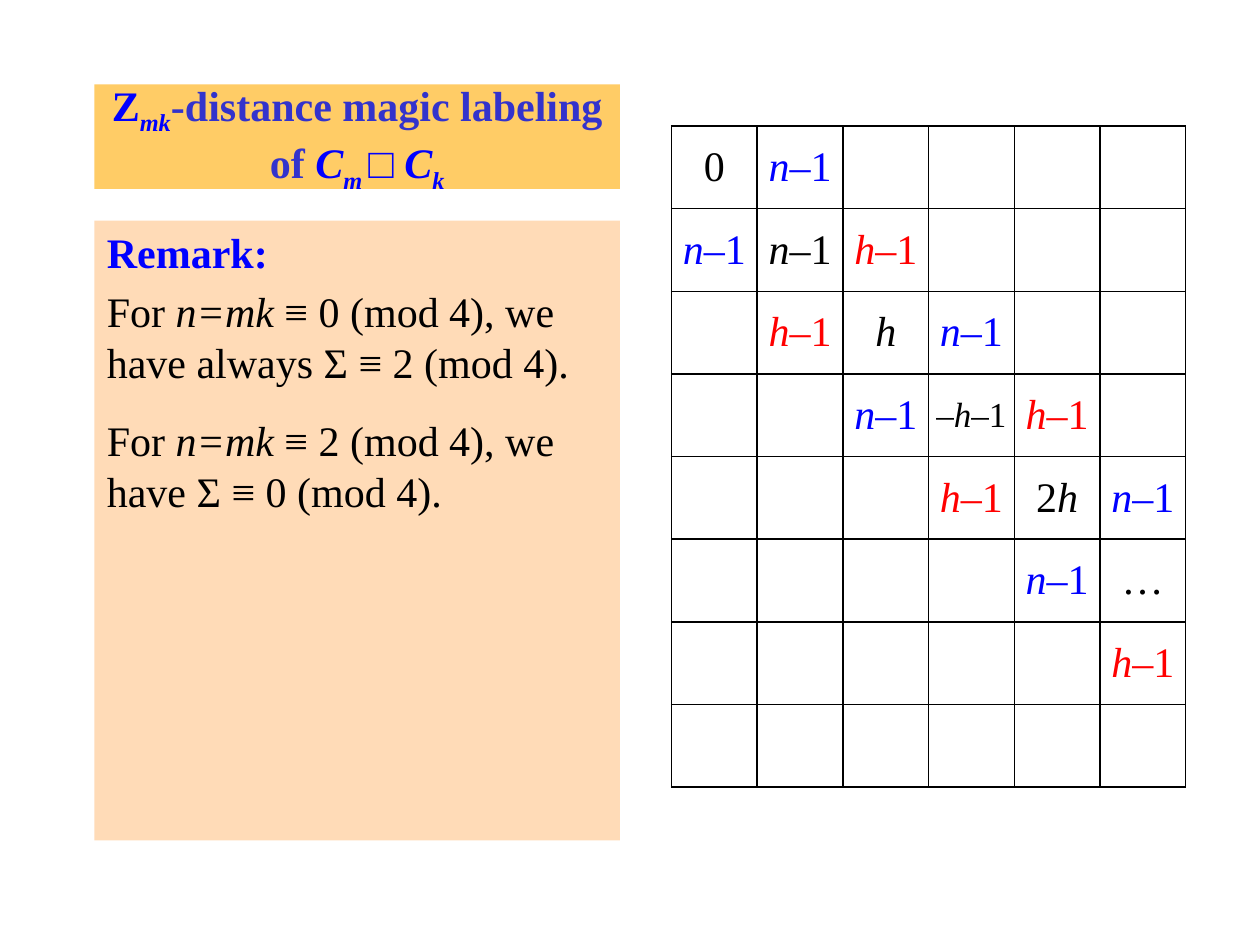
from lxml import etree
from pptx import Presentation
from pptx.dml.color import RGBColor
from pptx.enum.shapes import MSO_SHAPE
from pptx.enum.text import MSO_ANCHOR, PP_ALIGN
from pptx.oxml.ns import qn
from pptx.util import Inches, Pt

RECTANGLE = MSO_SHAPE.RECTANGLE
TOP, MIDDLE = MSO_ANCHOR.TOP, MSO_ANCHOR.MIDDLE
LEFT, CENTER = PP_ALIGN.LEFT, PP_ALIGN.CENTER

FONT = "Times New Roman"
COLORS = {
    "title_fill": "FFCC66",
    "remark_fill": "FFDBB7",
    "blue": "0000FF",
    "indigo": "3333CC",
    "red": "FF0000",
    "black": "000000",
}
ROWS, COLUMNS = 8, 6

# Main diagonal: runs of (text, italic) and the text size
DIAGONAL = [
    ([("0", False)], 24),
    ([("n", True), ("–1", False)], 24),
    ([("h", True)], 24),
    ([("–", False), ("h", True), ("–1", False)], 20),
    ([("2", False), ("h", True)], 24),
    ([("…", False)], 24),
]


def color(name):
    return RGBColor.from_string(COLORS[name])


def add_run(paragraph, text, color_name="black", size=24, bold=False,
            italic=False, subscript=False):
    run = paragraph.add_run()
    run.text = text
    font = run.font
    font.name, font.size = FONT, Pt(size)
    font.bold, font.italic = bold, italic
    font.color.rgb = color(color_name)
    if subscript:
        run._r.get_or_add_rPr().set("baseline", "-25000")


def add_panel(slide, top, height, fill_name, anchor):
    shape = slide.shapes.add_shape(
        RECTANGLE, Inches(0.75), Inches(top), Inches(4.17), Inches(height))
    shape.shadow.inherit = False
    shape.fill.solid()
    shape.fill.fore_color.rgb = color(fill_name)
    shape.line.fill.background()
    frame = shape.text_frame
    frame.word_wrap = True
    frame.vertical_anchor = anchor
    return frame


def add_title(slide):
    frame = add_panel(slide, 0.67, 0.83, "title_fill", MIDDLE)
    paragraph = frame.paragraphs[0]
    paragraph.alignment = CENTER
    add_run(paragraph, "Z", "blue", bold=True)
    add_run(paragraph, "mk", "blue", bold=True, italic=True, subscript=True)
    add_run(paragraph, "-distance magic labeling of ", "indigo", bold=True)
    add_run(paragraph, "C", "blue", bold=True, italic=True)
    add_run(paragraph, "m ", "blue", bold=True, italic=True, subscript=True)
    add_run(paragraph, "□ ", "blue")
    add_run(paragraph, "C", "blue", bold=True, italic=True)
    add_run(paragraph, "k", "blue", bold=True, italic=True, subscript=True)


def add_remark(slide):
    frame = add_panel(slide, 1.75, 4.92, "remark_fill", TOP)
    heading = frame.paragraphs[0]
    heading.alignment = LEFT
    heading.space_before = Pt(5)
    add_run(heading, "Remark:", "blue", bold=True)
    statements = [
        (" ≡ 0 (mod 4), we have always Σ ≡ 2 (mod 4).", 5),
        (" ≡ 2 (mod 4), we have Σ ≡ 0 (mod 4).", 16),
    ]
    for ending, gap in statements:
        paragraph = frame.add_paragraph()
        paragraph.alignment = LEFT
        paragraph.space_before = Pt(gap)
        add_run(paragraph, "For ")
        add_run(paragraph, "n=mk", italic=True)
        add_run(paragraph, ending)


def set_borders(cell):
    properties = cell._tc.get_or_add_tcPr()
    for position, side in enumerate(("lnL", "lnR", "lnT", "lnB")):
        line = etree.Element(qn(f"a:{side}"), w=str(Pt(1)))
        fill = etree.SubElement(line, qn("a:solidFill"))
        etree.SubElement(fill, qn("a:srgbClr"), val=COLORS["black"])
        properties.insert(position, line)


def cell_content(row, column):
    """Return runs, colour and size: a diagonal with alternating neighbours."""
    if row == column:
        runs, size = DIAGONAL[row]
        return runs, "black", size
    if abs(row - column) == 1:
        letter, color_name = (("n", "blue"), ("h", "red"))[min(row, column) % 2]
        return [(letter, True), ("–1", False)], color_name, 24
    return [], "black", 24


def add_label_table(slide):
    table = slide.shapes.add_table(
        ROWS, COLUMNS, Inches(5.33), Inches(1), Inches(4.08), Inches(5.25)).table
    table.first_row = table.horz_banding = False
    for row in range(ROWS):
        for column in range(COLUMNS):
            cell = table.cell(row, column)
            cell.fill.background()
            cell.vertical_anchor = MIDDLE
            cell.margin_left = cell.margin_right = Inches(0.05)
            cell.margin_top = cell.margin_bottom = Inches(0.05)
            set_borders(cell)
            paragraph = cell.text_frame.paragraphs[0]
            paragraph.alignment = CENTER
            runs, color_name, size = cell_content(row, column)
            for text, italic in runs:
                add_run(paragraph, text, color_name, size, italic=italic)


def main():
    presentation = Presentation()
    presentation.slide_width, presentation.slide_height = Inches(10), Inches(7.5)
    slide = presentation.slides.add_slide(presentation.slide_layouts[6])
    add_title(slide)
    add_remark(slide)
    add_label_table(slide)
    presentation.save("out.pptx")


if __name__ == "__main__":
    main()
